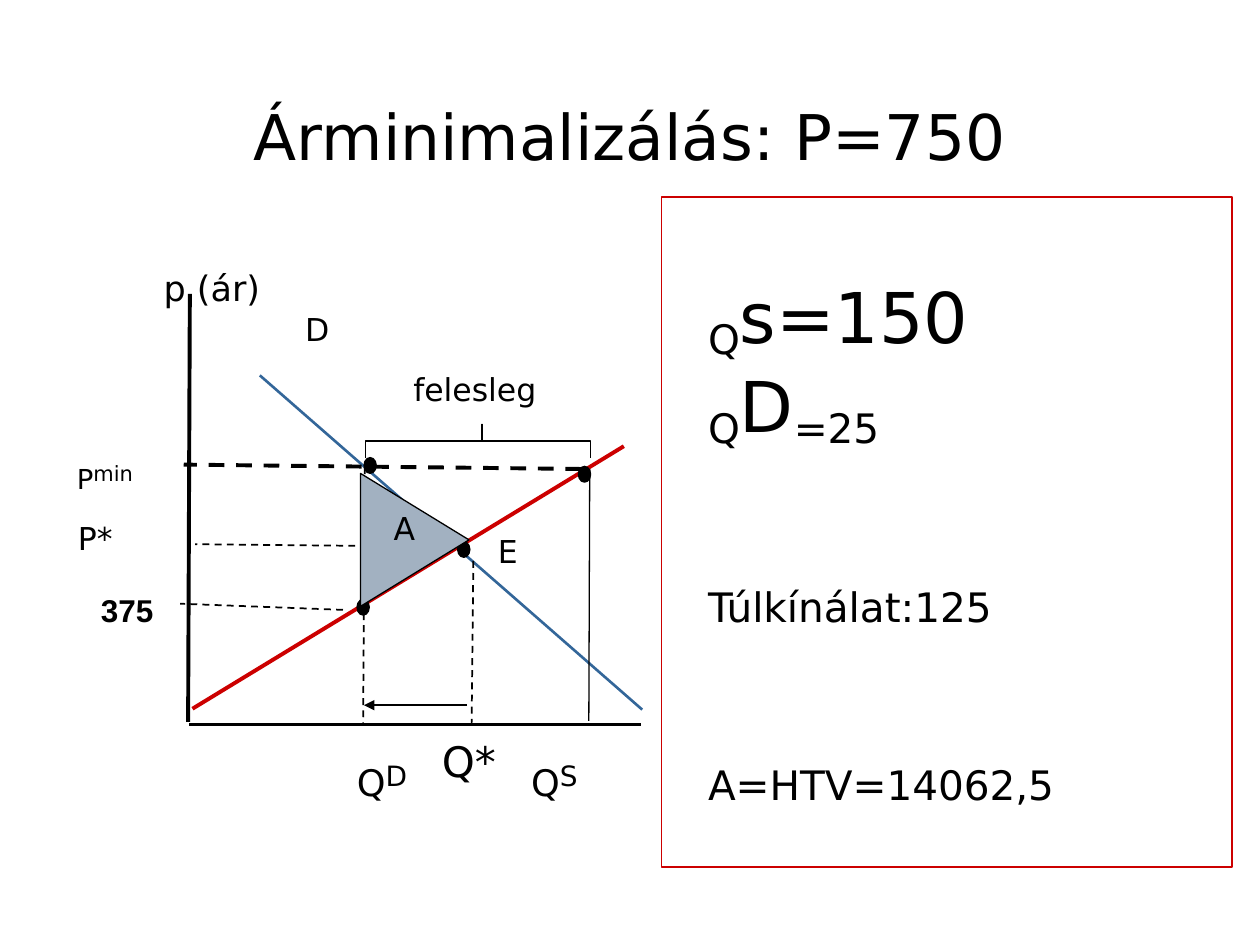
from lxml import etree
from pptx import Presentation
from pptx.dml.color import RGBColor
from pptx.enum.dml import MSO_LINE
from pptx.enum.shapes import MSO_CONNECTOR, MSO_SHAPE
from pptx.enum.text import MSO_ANCHOR, PP_ALIGN
from pptx.oxml.ns import qn
from pptx.util import Pt

BLACK = RGBColor(0x00, 0x00, 0x00)
BLUE = RGBColor(0x33, 0x66, 0x99)
RED = RGBColor(0xCC, 0x00, 0x00)
GREY_BLUE = RGBColor(0xA2, 0xB1, 0xC1)
LEFT, CENTER, RIGHT = PP_ALIGN.LEFT, PP_ALIGN.CENTER, PP_ALIGN.RIGHT

deck = Presentation()
deck.slide_width, deck.slide_height = Pt(720), Pt(540)
page = deck.slides.add_slide(deck.slide_layouts[6])
shapes = page.shapes


def add_line(start, end, color, width, dashed=False):
    line = shapes.add_connector(MSO_CONNECTOR.STRAIGHT, *map(Pt, start + end))
    line.line.color.rgb = color
    line.line.width = Pt(width)
    if dashed:
        line.line.dash_style = MSO_LINE.DASH
    etree.SubElement(line._element.spPr, qn("a:effectLst"))
    return line


def add_text(left, top, width, height, paragraphs, inset=0, font="DejaVu Sans"):
    """Each paragraph is (alignment, left indent, space before, runs); a run is (text, size, baseline %)."""
    box = shapes.add_textbox(Pt(left), Pt(top), Pt(width), Pt(height))
    frame = box.text_frame
    frame.word_wrap = True
    frame.margin_left = frame.margin_right = Pt(2 * inset)
    frame.margin_top = frame.margin_bottom = Pt(inset)
    for index, (alignment, indent, space, runs) in enumerate(paragraphs):
        para = frame.paragraphs[0] if index == 0 else frame.add_paragraph()
        para.alignment = alignment
        if indent:
            para._p.get_or_add_pPr().set("marL", str(Pt(indent)))
        if space:
            para.space_before = Pt(space)
        for text, size, baseline in runs:
            span = para.add_run()
            span.text = text
            span.font.name = font
            span.font.size = Pt(size)
            span.font.color.rgb = BLACK
            if baseline:
                span._r.get_or_add_rPr().set("baseline", str(baseline * 1000))
    return box


title = add_text(36, 34.5, 648, 65, [(CENTER, 0, 0, [("Árminimalizálás: P=750", 36, 0)])])
title.text_frame.margin_top = Pt(21)
title.text_frame.vertical_anchor = MSO_ANCHOR.MIDDLE

# Axes, demand and supply
for start, end, color, width in [
    ((108.5, 168), (107.5, 412.5), BLACK, 2.25),
    ((108, 414), (366.5, 414), BLACK, 2.25),
    ((148.5, 214.5), (367, 405.5), BLUE, 1.5),
    ((110, 405), (356.5, 255), RED, 2.25),
    ((337, 268), (336.5, 412), BLACK, 0.75),
]:
    add_line(start, end, color, width)

# Guides to the axes
for start, end, width in [
    ((208.5, 267), (207.5, 413.5), 1),
    ((270.5, 320.5), (269.5, 414), 1),
    ((265.5, 312.5), (111.5, 311), 1),
    ((196, 348.5), (103, 345), 1),
    ((332, 268), (105, 265.5), 2.25),
]:
    add_line(start, end, BLACK, width, dashed=True)

frame = shapes.add_shape(MSO_SHAPE.RECTANGLE, Pt(378), Pt(112.5), Pt(326), Pt(383))
frame.shadow.inherit = False
frame.fill.background()
frame.line.color.rgb = RED
frame.line.width = Pt(0.75)

for left, top in [(208, 261.5), (261.5, 309.5), (204, 342.5), (330.5, 266.5)]:
    dot = shapes.add_shape(MSO_SHAPE.OVAL, Pt(left), Pt(top), Pt(7), Pt(9))
    dot.shadow.inherit = False
    dot.fill.solid()
    dot.fill.fore_color.rgb = BLACK
    dot.line.color.rgb = BLACK
    dot.line.width = Pt(0.75)

# Surplus bracket and deadweight loss triangle
bracket = [(209, 262), (209, 252), (275.5, 252), (275.5, 242.5),
           (275.5, 252), (337.5, 252), (337.5, 262)]
triangle = [(206, 270.5), (268, 308.5), (206, 346.5)]
for points, fill in [(bracket, None), (triangle, GREY_BLUE)]:
    corners = [(Pt(x), Pt(y)) for x, y in points]
    builder = shapes.build_freeform(*corners[0])
    builder.add_line_segments(corners[1:], close=fill is not None)
    outline = builder.convert_to_shape()
    outline.shadow.inherit = False
    if fill is None:
        outline.fill.background()
    else:
        outline.fill.solid()
        outline.fill.fore_color.rgb = fill
    outline.line.color.rgb = BLACK
    outline.line.width = Pt(0.75)

arrow = add_line((267, 403), (208, 403), BLACK, 1)
etree.SubElement(arrow.line._get_or_add_ln(), qn("a:tailEnd"), type="triangle")

add_text(43, 152.5, 263.5, 123, [
    (LEFT, 50.5, 0, [("p (ár)", 20, 0)]),
    (CENTER, 13, 0.5, [("D", 18, 0)]),
    (RIGHT, 0, 13, [("felesleg", 18, 0)]),
    (LEFT, 1, 15, [("P", 27, -17), ("min", 12, 0)]),
])

for left, top, width, height, runs in [
    (203, 413.5, 33, 36, [("Q", 36, -16), ("D", 16, 0)]),
    (302.5, 413.5, 32, 36, [("Q", 36, -16), ("S", 16, 0)]),
    (251.5, 420.5, 36, 29, [("Q*", 24, 0)]),
    (283.5, 304, 14, 22, [("E", 18, 0)]),
    (43.5, 296.5, 24.5, 22, [("P*", 18, 0)]),
    (224, 291, 14.5, 22, [("A", 18, 0)]),
]:
    add_text(left, top, width, height, [(LEFT, 1, 0, runs)])

add_text(397.5, 152.5, 322.5, 298, [
    (LEFT, 0, 0, [("Q", 40, -16), ("s=150", 40, 0)]),
    (LEFT, 0, 0, [("Q", 40, -16), ("D", 40, 0), ("=25", 40, -16)]),
    (LEFT, 0, 51, [("Túlkínálat:125", 40, -16)]),
    (LEFT, 0, 51, [("A=HTV=14062,5", 40, -16)]),
], inset=3.6)

price = add_text(50.5, 334, 56, 29, [(LEFT, 0, 0, [("375", 18, 0)])], inset=3.6, font="Arial")
price.text_frame.paragraphs[0].runs[0].font.bold = True

deck.save("out.pptx")
